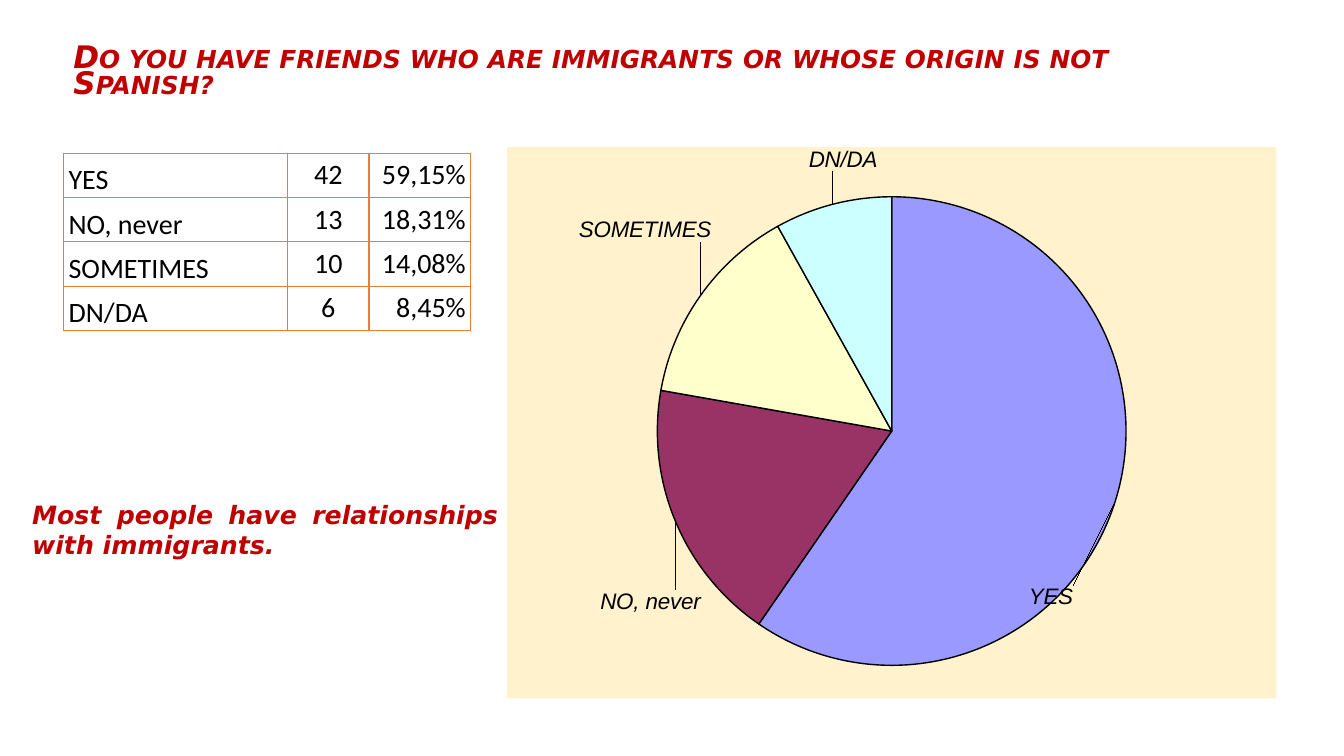
from dataclasses import dataclass

from lxml import etree
from pptx import Presentation
from pptx import util as u
from pptx.chart.data import CategoryChartData
from pptx.dml.color import RGBColor
from pptx.enum import chart as ch
from pptx.enum import text
from pptx.oxml import parse_xml
from pptx.oxml.ns import nsdecls, qn


@dataclass(frozen=True)
class Theme:
    accent: str = "C00000"
    ink: str = "000000"
    border: str = "ED7D31"
    panel: str = "FFF2CC"
    slices: tuple = ("9999FF", "993366", "FFFFCC", "CCFFFF")
    display: str = "DejaVu Sans"
    body: str = "Calibri"
    chart: str = "Arial"
    title_size: float = 22.2
    note_size: float = 18
    table_size: float = 20
    label_size: float = 16


def manual_layout(x, y, w=None, h=None):
    """Chart layout: an offset for a label, or an inner plot frame."""
    parts = {"x": x, "y": y}
    if w is not None:
        parts = {"layoutTarget": "inner", "xMode": "edge", "yMode": "edge",
                 **parts, "w": w, "h": h}
    inner = "".join(f'<c:{k} val="{v}"/>' for k, v in parts.items())
    return parse_xml(f'<c:layout {nsdecls("c")}><c:manualLayout>{inner}'
                     '</c:manualLayout></c:layout>')


class SlideBuilder:
    """Places elements by percentages of the slide's width and height."""

    def __init__(self, prs, theme):
        self.prs, self.theme = prs, theme
        self.s = prs.slides.add_slide(prs.slide_layouts[6])

    def frame(self, x, y, w, h):
        width, height = self.prs.slide_width, self.prs.slide_height
        return [u.Emu(round(share * side / 100))
                for share, side in zip((x, y, w, h), (width, height) * 2)]

    def style(self, font, face, size, color, bold=False, italic=False):
        font.name, font.size = face, u.Pt(size)
        font.bold, font.italic = bold, italic
        font.color.rgb = RGBColor.from_string(color)

    def heading(self, box, words, size, align, spacing=1.0, caps=False):
        tf = self.s.shapes.add_textbox(*self.frame(*box)).text_frame
        tf.word_wrap = True
        p = tf.paragraphs[0]
        p.alignment, p.line_spacing = align, spacing
        r = p.add_run()
        r.text = words
        self.style(r.font, self.theme.display, size, self.theme.accent, True, True)
        if caps:
            r.font._element.set("cap", "small")

    def cell_border(self, cell):
        tc_pr = cell._tc.get_or_add_tcPr()
        for i, side in enumerate(("lnL", "lnR", "lnT", "lnB")):
            tc_pr.insert(i, parse_xml(
                f'<a:{side} {nsdecls("a")} w="12700"><a:solidFill>'
                f'<a:srgbClr val="{self.theme.border}"/></a:solidFill></a:{side}>'))

    def table(self, box, rows, shares):
        left, top, width, height = self.frame(*box)
        table = self.s.shapes.add_table(len(rows), len(shares), left, top,
                                        width, height).table
        table.first_row = table.horz_banding = False
        for column, share in zip(table.columns, shares):
            column.width = u.Emu(round(width * share))
        aligns = (text.PP_ALIGN.LEFT, text.PP_ALIGN.CENTER, text.PP_ALIGN.RIGHT)
        anchors = (text.MSO_ANCHOR.BOTTOM,) + (text.MSO_ANCHOR.MIDDLE,) * 2
        for i, row in enumerate(rows):
            for j, words in enumerate(row):
                cell = table.cell(i, j)
                cell.fill.background()
                cell.margin_left = cell.margin_right = u.Inches(0.05)
                cell.margin_top = cell.margin_bottom = 0
                cell.vertical_anchor = anchors[j]
                p = cell.text_frame.paragraphs[0]
                p.alignment = aligns[j]
                r = p.add_run()
                r.text = words
                self.style(r.font, self.theme.body, self.theme.table_size,
                           self.theme.ink)
                self.cell_border(cell)

    def pie(self, box, names, values, offsets):
        t = self.theme
        data = CategoryChartData()
        data.categories = names
        data.add_series("Series 1", values)
        chart = self.s.shapes.add_chart(ch.XL_CHART_TYPE.PIE,
                                        *self.frame(*box), data).chart
        chart.has_legend = chart.has_title = False
        self.style(chart.font, t.chart, 10, t.ink)

        # Panel colour and plot frame
        space = chart._chartSpace
        space.find(qn("c:chart")).addnext(parse_xml(
            f'<c:spPr {nsdecls("c", "a")}><a:solidFill><a:srgbClr val="{t.panel}"/>'
            '</a:solidFill><a:ln><a:noFill/></a:ln></c:spPr>'))
        area = next(space.iter(qn("c:plotArea")))
        for old in area.findall(qn("c:layout")):
            area.remove(old)
        area.insert(0, manual_layout(0.03, 0.09, 0.94, 0.85))

        # Slices and category labels with leader lines
        plot = chart.plots[0]
        plot.vary_by_categories = True
        series = plot.series[0]
        labels = series.data_labels
        labels.show_value, labels.show_category_name = False, True
        labels.position = ch.XL_LABEL_POSITION.OUTSIDE_END
        self.style(labels.font, t.chart, t.label_size, t.ink, italic=True)
        for i, (color, offset) in enumerate(zip(t.slices, offsets)):
            point = series.points[i]
            point.format.fill.solid()
            point.format.fill.fore_color.rgb = RGBColor.from_string(color)
            point.format.line.color.rgb = RGBColor.from_string(t.ink)
            point.format.line.width = u.Pt(1)
            label = point.data_label
            self.style(label.font, t.chart, t.label_size, t.ink, italic=True)
            label.position = ch.XL_LABEL_POSITION.OUTSIDE_END
            node = series._element.findall(f'{qn("c:dLbls")}/{qn("c:dLbl")}')[i]
            node.find(qn("c:showVal")).set("val", "0")
            node.find(qn("c:showCatName")).set("val", "1")
            node.insert(1, manual_layout(*offset))
        group = series._element.find(qn("c:dLbls"))
        leader = group.find(qn("c:showLeaderLines"))
        if leader is None:
            leader = etree.SubElement(group, qn("c:showLeaderLines"))
        leader.set("val", "1")


def main():
    prs = Presentation()
    prs.slide_width, prs.slide_height = u.Inches(13.33), u.Inches(7.5)
    theme = Theme()
    slide = SlideBuilder(prs, theme)

    # Question and conclusion
    slide.heading((4.73, 5.6, 89.12, 9.07),
                  "Do you have friends who are immigrants or whose origin is not Spanish?",
                  theme.title_size, text.PP_ALIGN.LEFT, spacing=0.7, caps=True)
    slide.heading((1.65, 65.33, 36.16, 9.47),
                  "Most people have relationships with immigrants.",
                  theme.note_size, text.PP_ALIGN.JUSTIFY)

    # Answers
    answers = [("YES", "42", "59,15%"), ("NO, never", "13", "18,31%"),
               ("SOMETIMES", "10", "14,08%"), ("DN/DA", "6", "8,45%")]
    slide.table((4.73, 20.27, 30.31, 23.47), answers, (0.55, 0.2, 0.25))
    slide.pie((37.73, 19.47, 57.24, 72.93), [row[0] for row in answers],
              (59, 18, 14, 8),
              ((-0.12, 0.15), (0.04, 0.12), (0.02, -0.09), (0.06, -0.05)))

    prs.save("out.pptx")


if __name__ == "__main__":
    main()
